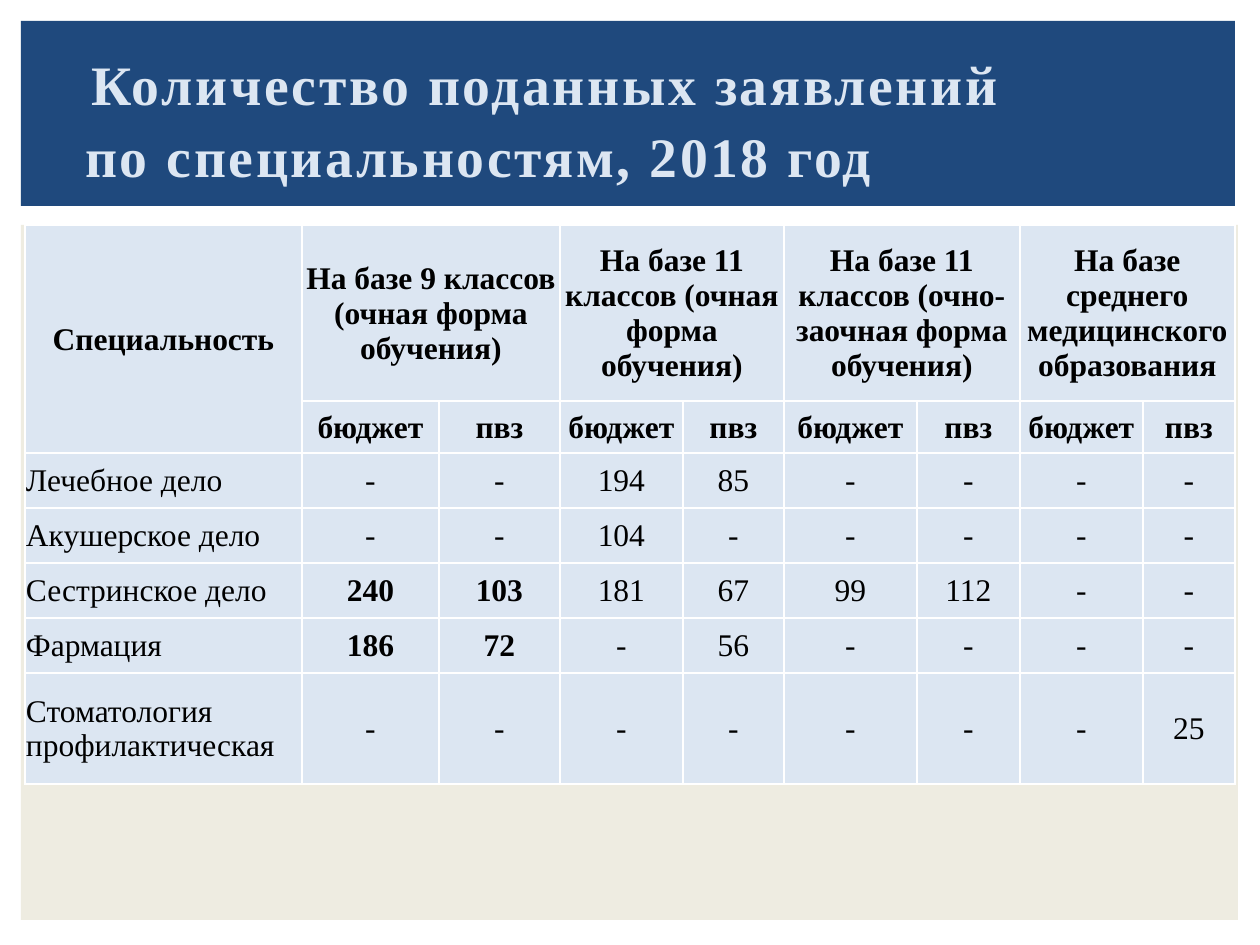
from lxml import etree
from pptx import Presentation
from pptx import util as u
from pptx.dml.color import RGBColor
from pptx.enum import shapes, text
from pptx.oxml import ns

PX = 914400 / 126
WHITE = RGBColor(0xFF, 0xFF, 0xFF)
BLACK = RGBColor(0, 0, 0)
NAVY = RGBColor(0x1F, 0x49, 0x7D)
BEIGE = RGBColor(0xEE, 0xEC, 0xE1)
PALE_BLUE = RGBColor(0xDC, 0xE6, 0xF2)
SERIF = "Times New Roman"

COLUMN_WIDTHS = [277, 137, 121, 123, 101, 133, 103, 123, 92]
ROW_HEIGHTS = [176, 52, 55, 55, 55, 55, 111]
GROUPS = [
    "На базе 9 классов (очная форма обучения)",
    "На базе 11 классов (очная форма обучения)",
    "На базе 11 классов (очно-заочная форма обучения)",
    "На базе среднего медицинского образования",
]
SPECIALTIES = [
    ("Лечебное дело", "- - 194 85 - - - -"),
    ("Акушерское дело", "- - 104 - - - - -"),
    ("Сестринское дело", "240 103 181 67 99 112 - -"),
    ("Фармация", "186 72 - 56 - - - -"),
    ("Стоматология профилактическая", "- - - - - - - 25"),
]
BOLD_VALUES = {"240", "103", "186", "72"}


def px(length):
    return u.Emu(round(length * PX))


def apply(target, values):
    for name, value in values.items():
        setattr(target, name, value)


def add_run(paragraph, content, color, **values):
    run = paragraph.add_run()
    run.text = content
    apply(run.font, values)
    run.font.color.rgb = color
    return run


def add_panel(slide, box, color):
    shape = slide.shapes.add_shape(shapes.MSO_SHAPE.RECTANGLE, *map(px, box))
    shape.shadow.inherit = False
    shape.fill.solid()
    shape.fill.fore_color.rgb = color
    shape.line.fill.background()


def add_title(slide, box):
    left, top, width, height = box
    add_panel(slide, box, NAVY)
    shape = slide.shapes.add_textbox(px(left + 14), px(top + 16), px(width - 195), px(height - 30))
    apply(shape.text_frame, {"word_wrap": True, "vertical_anchor": text.MSO_ANCHOR.MIDDLE})
    paragraph = shape.text_frame.paragraphs[0]
    paragraph.line_spacing = 1.07
    properties = paragraph._p.get_or_add_pPr()
    properties.set("marL", str(px(38)))
    properties.set("indent", str(-px(32)))
    runs = [
        add_run(paragraph, "\N{NO-BREAK SPACE}", WHITE, name="Courier New", size=u.Pt(34.1), bold=True),
        add_run(paragraph, "Количество поданных заявлений по специальностям, 2018 год",
                PALE_BLUE, name=SERIF, size=u.Pt(31.8), bold=True),
    ]
    for run in runs:
        run.font._element.set("spc", "150")


def add_borders(cell):
    properties = cell._tc.get_or_add_tcPr()
    for side in ("lnL", "lnR", "lnT", "lnB"):
        line = etree.SubElement(properties, ns.qn(f"a:{side}"), w=str(u.Pt(1)))
        fill = etree.SubElement(line, ns.qn("a:solidFill"))
        etree.SubElement(fill, ns.qn("a:srgbClr"), val=str(WHITE))


def fill_cell(cell, content, bold, centered):
    apply(cell, {
        "margin_left": px(1), "margin_right": px(1), "margin_top": px(1), "margin_bottom": 0,
        "vertical_anchor": text.MSO_ANCHOR.MIDDLE,
    })
    add_borders(cell)
    cell.fill.solid()
    cell.fill.fore_color.rgb = PALE_BLUE
    paragraph = cell.text_frame.paragraphs[0]
    paragraph.alignment = text.PP_ALIGN.CENTER if centered else text.PP_ALIGN.LEFT
    paragraph.font.size = u.Pt(18)
    if content:
        add_run(paragraph, content, BLACK, name=SERIF, size=u.Pt(18), bold=bold)


def add_applications_table(slide, left, top):
    rows = [
        ["Специальность"] + [label for group in GROUPS for label in (group, "")],
        [""] + ["бюджет", "пвз"] * len(GROUPS),
    ] + [[name] + values.split() for name, values in SPECIALTIES]
    table = slide.shapes.add_table(
        len(ROW_HEIGHTS), len(COLUMN_WIDTHS), px(left), px(top),
        px(sum(COLUMN_WIDTHS)), px(sum(ROW_HEIGHTS))).table
    apply(table, {"first_row": False, "horz_banding": False})
    for column, width in zip(table.columns, COLUMN_WIDTHS):
        column.width = px(width)
    for row, height in zip(table.rows, ROW_HEIGHTS):
        row.height = px(height)
    for r, row in enumerate(rows):
        for c, content in enumerate(row):
            fill_cell(table.cell(r, c), content, r < 2 or content in BOLD_VALUES, r < 2 or c > 0)
    table.cell(0, 0).merge(table.cell(1, 0))
    for c in range(1, len(COLUMN_WIDTHS), 2):
        table.cell(0, c).merge(table.cell(0, c + 1))


def main():
    presentation = Presentation()
    apply(presentation, {"slide_width": px(1260), "slide_height": px(945)})
    slide = presentation.slides.add_slide(presentation.slide_layouts[6])
    add_panel(slide, (21, 225, 1217, 695), BEIGE)
    add_title(slide, (21, 21, 1214, 185))
    add_applications_table(slide, 25, 225)
    presentation.save("out.pptx")


if __name__ == "__main__":
    main()
